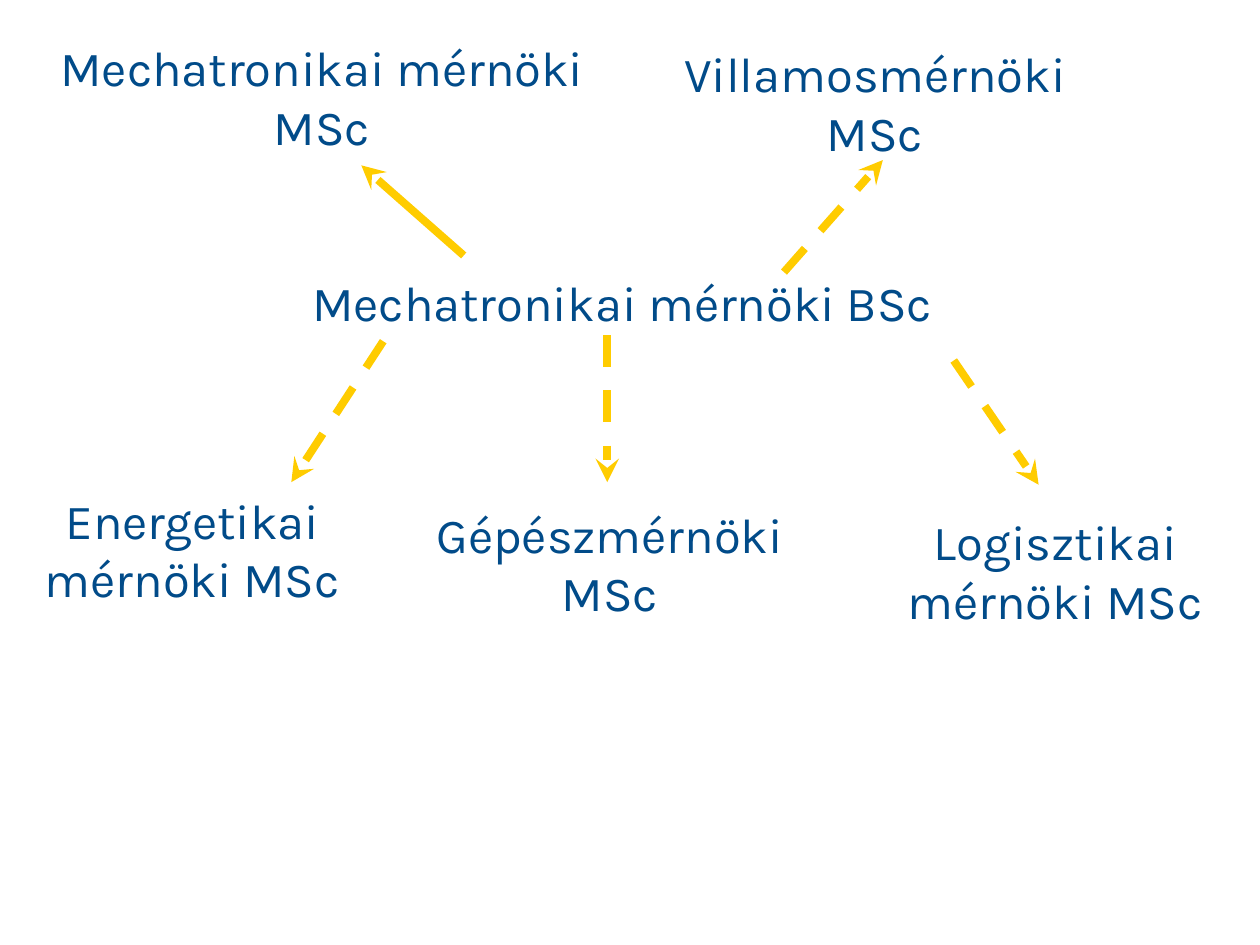
"""Build a slide of the MSc courses that follow the mechatronics BSc."""
import pptx
import pptx.util
import pptx.dml.color
import pptx.enum.dml
import pptx.enum.shapes
import pptx.enum.text
import pptx.oxml.ns
import lxml.etree

Pt = pptx.util.Pt
HUES = {"text": "014B89", "line": "FFCC00"}


class Chart:
    """Hold the style and the slide being drawn."""

    font = "Karla"
    size = 28
    width = 4.5

    def __init__(self, slide):
        self.slide = slide

    def hue(self, name):
        """Return a named colour."""
        return pptx.dml.color.RGBColor.from_string(HUES[name])

    def label(self, words, left, top, width, height):
        """Add a centred course name."""
        box = self.slide.shapes.add_textbox(Pt(left), Pt(top), Pt(width), Pt(height))
        frame = box.text_frame
        frame.word_wrap = True
        frame.auto_size = pptx.enum.text.MSO_AUTO_SIZE.SHAPE_TO_FIT_TEXT
        para = frame.paragraphs[0]
        para.alignment = pptx.enum.text.PP_ALIGN.CENTER
        run = para.add_run()
        run.text = words
        run.font.name = self.font
        run.font.size = Pt(self.size)
        run.font.color.rgb = self.hue("text")

    def arrow(self, start, end, dashed=True):
        """Add an arrow from start to end."""
        kind = pptx.enum.shapes.MSO_CONNECTOR.STRAIGHT
        link = self.slide.shapes.add_connector(kind, *map(Pt, start + end))
        link.line.color.rgb = self.hue("line")
        link.line.width = Pt(self.width)
        if dashed:
            link.line.dash_style = pptx.enum.dml.MSO_LINE.DASH
        props = link._element.spPr
        qn = pptx.oxml.ns.qn
        lxml.etree.SubElement(props.find(qn("a:ln")), qn("a:tailEnd"), type="stealth")
        lxml.etree.SubElement(props, qn("a:effectLst"))


def main():
    """Draw the courses and save the deck."""
    deck = pptx.Presentation()
    deck.slide_width, deck.slide_height = Pt(720), Pt(540)
    chart = Chart(deck.slides.add_slide(deck.slide_layouts[6]))

    tall = 75
    chart.label("Mechatronikai mérnöki BSc", 20, 152, 671, 41)
    chart.label("Energetikai mérnöki MSc", -13, 276.5, 246, tall)
    chart.label("Logisztikai mérnöki MSc", 486, 289, 234, tall)
    chart.label("Mechatronikai mérnöki MSc", 15, 18, 338, tall)
    chart.label("Gépészmérnöki MSc", 238, 284.5, 221, tall)
    chart.label("Villamosmérnöki MSc", 371.5, 21.5, 257, tall)

    chart.arrow((265, 146), (206.5, 94.5), dashed=False)
    chart.arrow((219, 195), (166.5, 275.5))
    chart.arrow((545, 206), (593.5, 277))
    chart.arrow((347, 191.5), (347, 275.5))
    chart.arrow((448, 155.5), (504.5, 91.5))
    deck.save("out.pptx")


if __name__ == "__main__":
    main()
